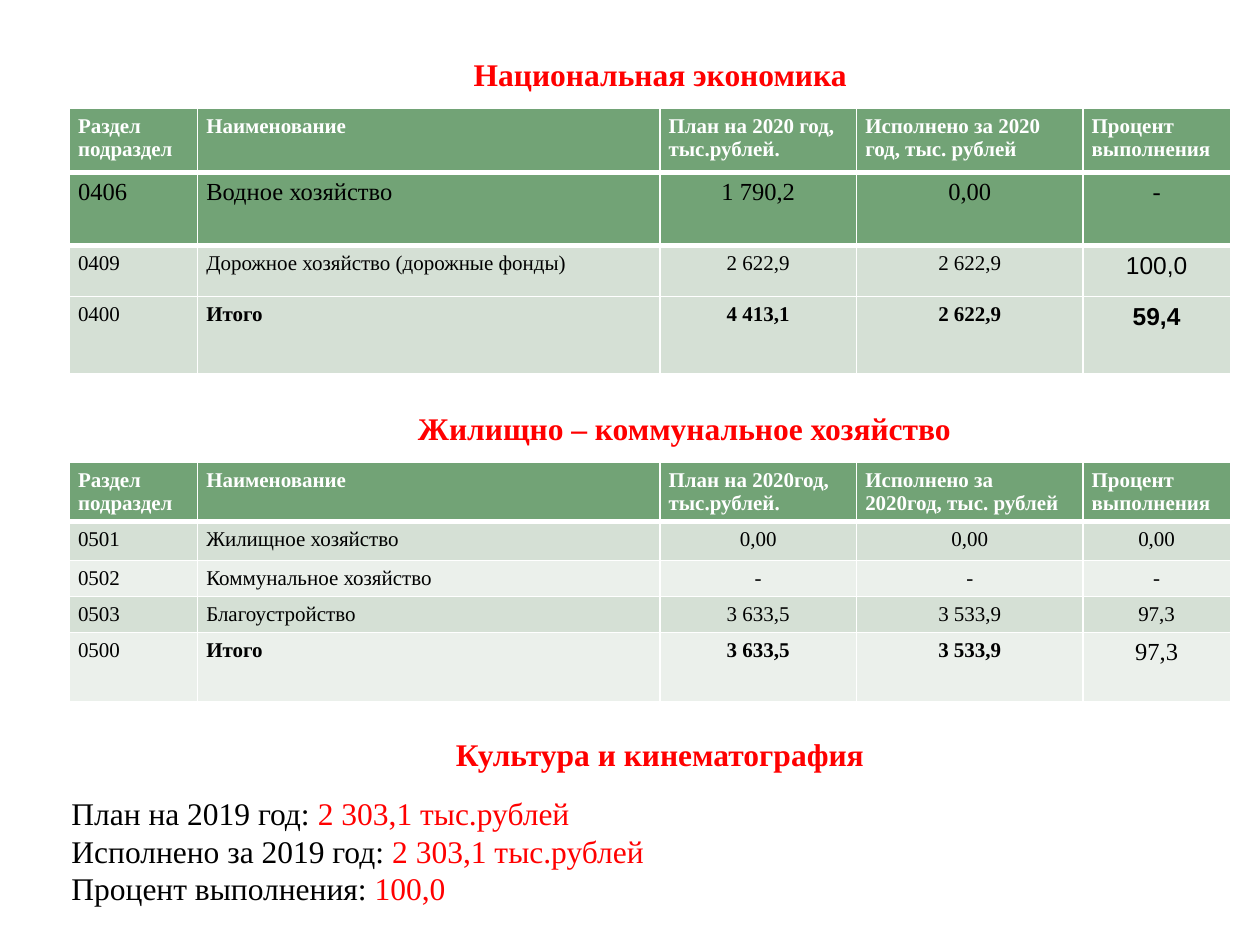
from lxml.etree import SubElement
from pptx import Presentation
from pptx.dml.color import RGBColor
from pptx.enum.text import MSO_ANCHOR, MSO_AUTO_SIZE, PP_ALIGN
from pptx.oxml.ns import qn
from pptx.util import Pt

SERIF, SANS = "Times New Roman", "Arial"
RED, BLACK, WHITE = "FF0000", "000000", "FFFFFF"
GREEN, MID, PALE = "72A376", "D5E0D5", "EBF0EB"
THIN, THICK = 0.96, 3
LEFT = 39.6
COLS = [73.3, 264.2, 112.4, 129.4, 84.2]

HEAD = {"color": WHITE, "bold": True}
BIG = {"size": 14}
ARIAL = {"size": 14, "font": SANS}
BOLD = {"bold": True}

HEADS = [
    ("Национальная экономика", 263.5, 28.1, 232, 50.4, True),
    ("Жилищно – коммунальное хозяйство", 231.8, 230.4, 309.6, 33.8, False),
    ("Культура и кинематография", 253.4, 416.2, 314.6, 33.8, True),
]

TABLES = [
    (61.9, [
        (36.7, GREEN, THICK, HEAD, HEAD,
         ["Раздел подраздел", "Наименование", "План на 2020 год, тыс.рублей.",
          "Исполнено за 2020 год, тыс. рублей", "Процент\nвыполнения"]),
        (41.8, GREEN, THICK, BIG, BIG,
         ["0406", "Водное хозяйство", "1 790,2", "0,00", "-"]),
        (29.2, MID, THIN, {}, ARIAL,
         ["0409", "Дорожное хозяйство (дорожные фонды)", "2 622,9", "2 622,9", "100,0"]),
        (43.9, MID, THIN, BOLD, ARIAL | BOLD,
         ["0400", "Итого", "4 413,1", "2 622,9", "59,4"]),
    ]),
    (264.2, [
        (33.9, GREEN, THICK, HEAD, HEAD,
         ["Раздел подраздел", "Наименование", "План на 2020год, тыс.рублей.",
          "Исполнено за 2020год, тыс. рублей", "Процент\nвыполнения"]),
        (22.3, MID, THIN, {}, {}, ["0501", "Жилищное хозяйство", "0,00", "0,00", "0,00"]),
        (20.5, PALE, THIN, {}, {}, ["0502", "Коммунальное хозяйство", "-", "-", "-"]),
        (20.5, MID, THIN, {}, {}, ["0503", "Благоустройство", "3 633,5", "3 533,9", "97,3"]),
        (39.6, PALE, THIN, BOLD, BIG, ["0500", "Итого", "3 633,5", "3 533,9", "97,3"]),
    ]),
]

FACTS = [
    ("План на 2019 год: ", "2 303,1 тыс.рублей"),
    ("Исполнено за 2019 год: ", "2 303,1 тыс.рублей"),
    ("Процент выполнения: ", "100,0"),
]


def rgb(code):
    return RGBColor.from_string(code)


def put(frame, lines, size=12, font=SERIF, color=BLACK, bold=False, align=PP_ALIGN.LEFT):
    for i, runs in enumerate(lines):
        para = frame.add_paragraph() if i else frame.paragraphs[0]
        para.alignment = align
        for text, tint in runs:
            run = para.add_run()
            run.text = text
            run.font.size = Pt(size)
            run.font.name = font
            run.font.bold = bold
            run.font.color.rgb = rgb(tint or color)


def place(shape, left, top, width, height, wrap=True):
    shape.left, shape.top = Pt(left), Pt(top)
    shape.width, shape.height = Pt(width), Pt(height)
    frame = shape.text_frame
    frame.auto_size = MSO_AUTO_SIZE.NONE
    frame.word_wrap = wrap
    frame.vertical_anchor = MSO_ANCHOR.TOP
    return frame


def edge(cell, above, below):
    props = cell._tc.get_or_add_tcPr()
    for tag, width in (("lnL", THIN), ("lnR", THIN), ("lnT", above), ("lnB", below)):
        line = SubElement(props, qn("a:" + tag), w=str(int(Pt(width))))
        SubElement(SubElement(line, qn("a:solidFill")), qn("a:srgbClr"), val=WHITE)


def grid(slide, top, rows):
    high = sum(row[0] for row in rows)
    table = slide.shapes.add_table(
        len(rows), len(COLS), Pt(LEFT), Pt(top), Pt(sum(COLS)), Pt(high)).table
    for col, width in zip(table.columns, COLS):
        col.width = Pt(width)
    above = THIN
    for r, (height, fill, below, base, last, texts) in enumerate(rows):
        table.rows[r].height = Pt(height)
        for c, text in enumerate(texts):
            cell = table.cell(r, c)
            cell.margin_left = cell.margin_right = Pt(5)
            cell.margin_top = cell.margin_bottom = Pt(3.6)
            edge(cell, above, below)
            cell.fill.solid()
            cell.fill.fore_color.rgb = rgb(fill)
            look = dict(last if c == len(COLS) - 1 else base)
            if r and c == 0:
                look["bold"] = False
            if r and c > 1:
                look["align"] = PP_ALIGN.CENTER
            put(cell.text_frame, [[(part, None)] for part in text.split("\n")], **look)
        above = below


def main():
    deck = Presentation()
    deck.slide_width, deck.slide_height = Pt(720), Pt(540)
    slide = deck.slides.add_slide(deck.slide_layouts[5])
    for i, (text, *box) in enumerate(HEADS):
        shape = slide.shapes.add_textbox(0, 0, 0, 0) if i else slide.shapes.title
        put(place(shape, *box), [[(text, None)]], size=18, color=RED, bold=True)
    for top, rows in TABLES:
        grid(slide, top, rows)
    facts = place(slide.shapes.add_textbox(0, 0, 0, 0), 33.8, 450, 489.6, 73.4)
    put(facts, [[(label, BLACK), (value, RED)] for label, value in FACTS], size=18)
    deck.save("out.pptx")


if __name__ == "__main__":
    main()
